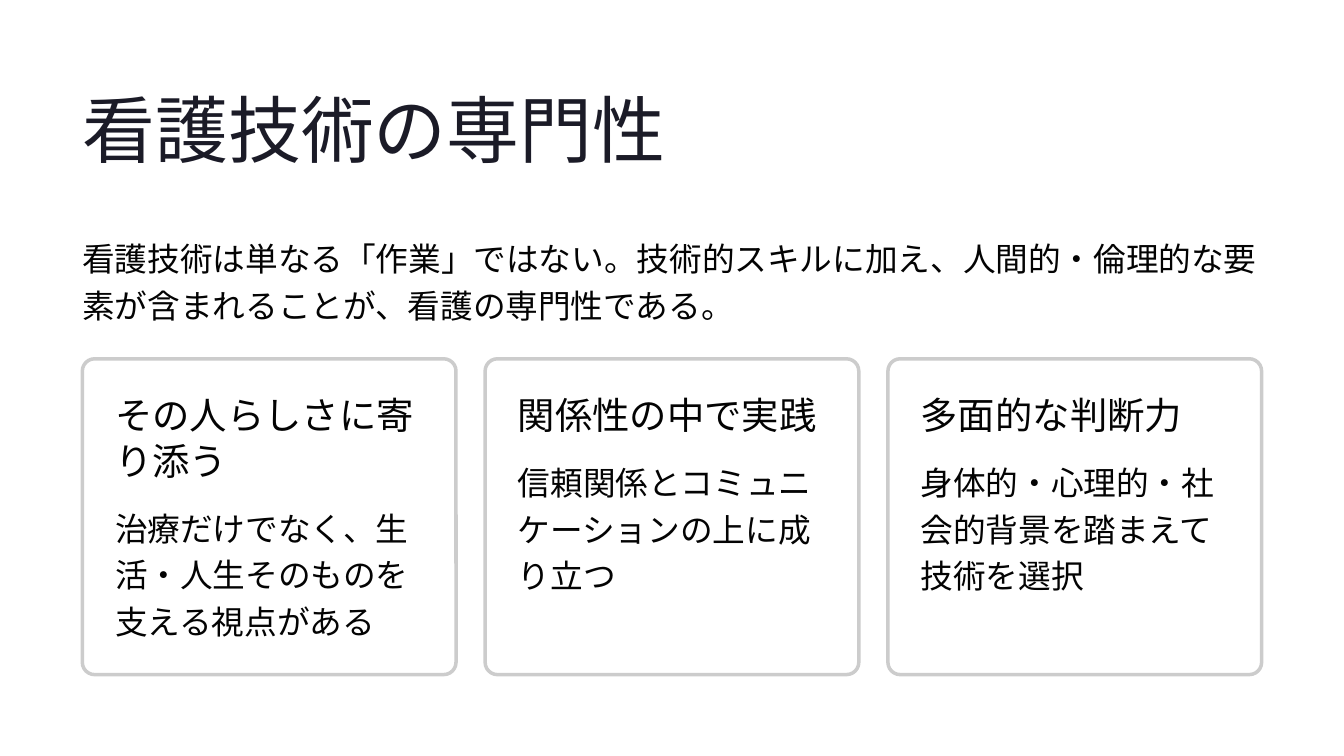
from lxml import etree
from pptx import Presentation
from pptx.dml.color import RGBColor
from pptx.enum.lang import MSO_LANGUAGE_ID
from pptx.enum.shapes import MSO_SHAPE
from pptx.oxml.ns import qn
from pptx.util import Cm, Pt

ROUNDED = MSO_SHAPE.ROUNDED_RECTANGLE
JAPANESE = MSO_LANGUAGE_ID.JAPANESE

COLORS = {"title": "1B1B27", "text": "030303", "card": "FFFFFF", "border": "CCCCCC"}
STYLES = {
    "title": {"name": "Inter", "size": Pt(62.5), "language_id": JAPANESE},
    "heading": {"name": "Inter", "size": Pt(32), "language_id": JAPANESE},
    "body": {"name": "Lato", "size": Pt(28), "language_id": JAPANESE},
}
SPACING = {"title": Pt(78.5), "heading": Pt(39), "body": Pt(40)}

prs = Presentation()
prs.slide_width, prs.slide_height = Cm(40.64), Cm(22.86)
s = prs.slides.add_slide(prs.slide_layouts[6])


def add_text(text, style, left, top, width, height, color="text", wrap=True):
    tf = s.shapes.add_textbox(Cm(left), Cm(top), Cm(width), Cm(height)).text_frame
    tf.word_wrap = wrap
    for side in ("left", "top", "right", "bottom"):
        setattr(tf, f"margin_{side}", 0)
    p = tf.paragraphs[0]
    p.line_spacing = SPACING[style]
    r = p.add_run()
    r.text = text
    for key, value in STYLES[style].items():
        setattr(r.font, key, value)
    r.font.color.rgb = RGBColor.from_string(COLORS[color])
    # East Asian typeface
    etree.SubElement(r.font._element, qn("a:ea"), typeface=STYLES[style]["name"])


# Title and introduction
LEFT = 2.49
add_text("看護技術の専門性", "title", LEFT, 2.44, 22.23, 2.77, color="title", wrap=False)
add_text("看護技術は単なる「作業」ではない。技術的スキルに加え、人間的・倫理的な要素が含まれることが、看護の専門性である。",
         "body", LEFT, 7.01, 35.66, 2.84)

# Cards: heading, number of heading lines, body
CARDS = [
    ("その人らしさに寄り添う", 2, "治療だけでなく、生活・人生そのものを支える視点がある"),
    ("関係性の中で実践", 1, "信頼関係とコミュニケーションの上に成り立つ"),
    ("多面的な判断力", 1, "身体的・心理的・社会的背景を踏まえて技術を選択"),
]
CARD_TOP, CARD_W, CARD_H, CARD_STEP = 10.85, 11.3, 9.55, 12.18
PAD, TEXT_W, LINE_H, GAP = 0.99, 9.3, 1.38, 0.55

for i, (heading, lines, body) in enumerate(CARDS):
    left = LEFT + i * CARD_STEP
    sp = s.shapes.add_shape(ROUNDED, Cm(left), Cm(CARD_TOP), Cm(CARD_W), Cm(CARD_H))
    sp.shadow.inherit = False
    sp.adjustments[0] = 0.039
    sp.fill.solid()
    sp.fill.fore_color.rgb = RGBColor.from_string(COLORS["card"])
    # 95 % opacity
    fill_color = sp._element.spPr.find(qn("a:solidFill")).find(qn("a:srgbClr"))
    etree.SubElement(fill_color, qn("a:alpha"), val="95000")
    sp.line.color.rgb = RGBColor.from_string(COLORS["border"])
    sp.line.width = Pt(3)

    top = CARD_TOP + PAD
    heading_h = lines * LINE_H
    add_text(heading, "heading", left + PAD, top, TEXT_W, heading_h, wrap=lines > 1)
    add_text(body, "body", left + PAD, top + heading_h + GAP, TEXT_W, 4.27)

prs.save("out.pptx")
